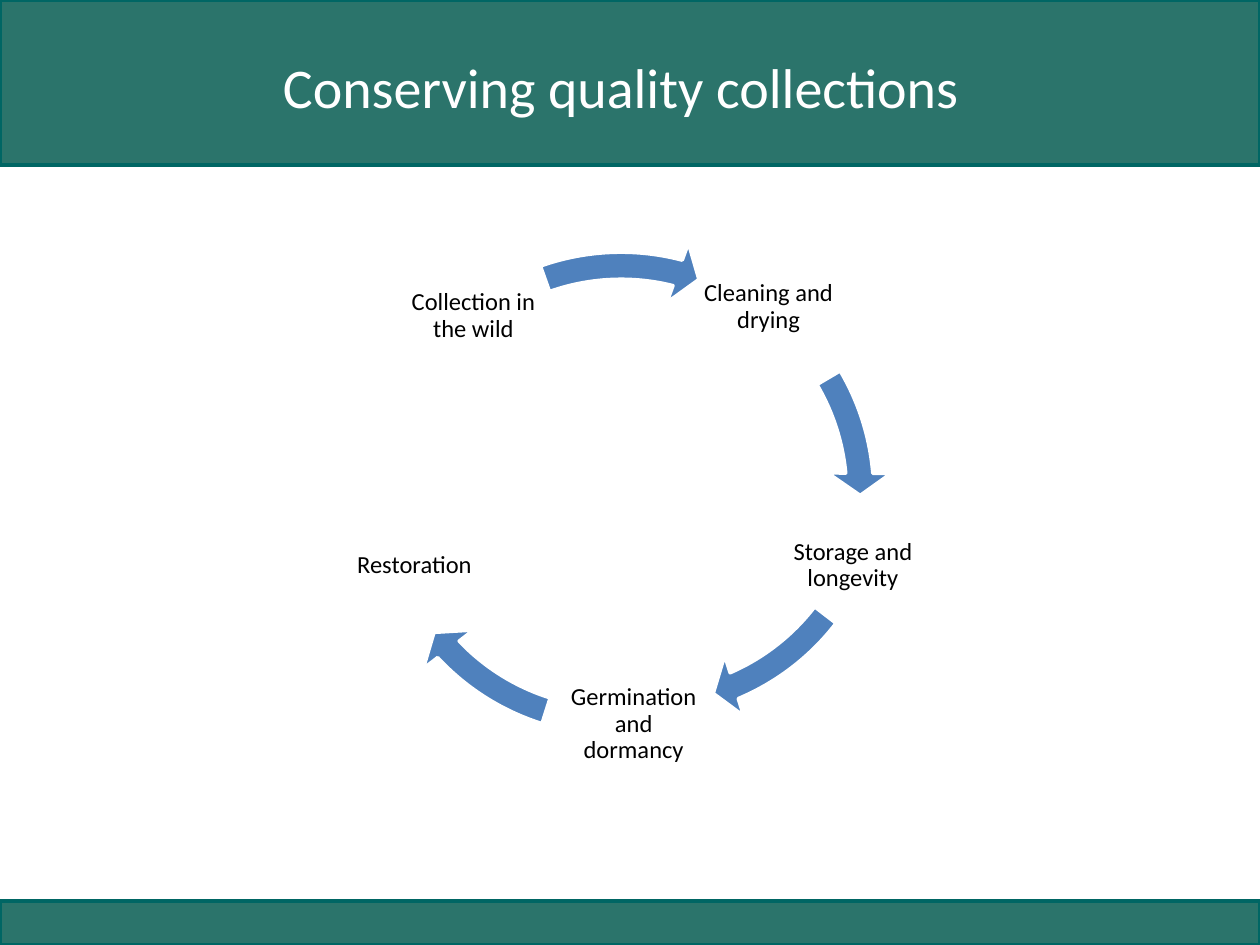
from pptx import Presentation
from pptx.dml.color import RGBColor
from pptx.enum.shapes import MSO_SHAPE as SHAPE
from pptx.enum.text import MSO_ANCHOR as ANCHOR, MSO_AUTO_SIZE as AUTO, PP_ALIGN as ALIGN
from pptx.util import Cm, Pt

GREEN = RGBColor(0x2B, 0x74, 0x6B)
DARK_GREEN = RGBColor(0x00, 0x66, 0x64)
BLUE = RGBColor(0x4F, 0x81, 0xBD)
WHITE = RGBColor(0xFF, 0xFF, 0xFF)
BLACK = RGBColor(0x00, 0x00, 0x00)

WIDTH, HEIGHT = 25.4, 19.05
LABEL_SIZE = 2.79
RING_SIZE = 10.46
THICKNESS, HEAD_ANGLE, HEAD_WIDTH = 0.052, 3.36, 0.061

STEPS = [
    ("Cleaning and drying", 14.1, 4.8),
    ("Storage and longevity", 15.8, 10.01),
    ("Germination and dormancy", 11.38, 13.21),
    ("Restoration", 6.96, 10.01),
    ("Collection in the wild", 8.15, 4.98),
]
ARROWS = [
    (7.52, 4.72, 212.928, 197.666),
    (7.77, 4.37, 40.143, 22.538),
    (7.16, 4.72, 82.102, 64.497),
    (7.29, 4.72, 170.637, 150.303),
]


def set_attrs(target, values):
    for name, value in values.items():
        setattr(target, name, value)


def add_filled(s, kind, box, fill, line):
    sp = s.shapes.add_shape(kind, *map(Cm, box))
    sp.shadow.inherit = False
    sp.fill.solid()
    sp.fill.fore_color.rgb = fill
    sp.line.color.rgb = line
    sp.line.width = Pt(2)
    return sp


def write_text(tf, text, size, color):
    set_attrs(tf, {"word_wrap": True, "auto_size": AUTO.NONE,
                   "vertical_anchor": ANCHOR.MIDDLE})
    p = tf.paragraphs[0]
    p.alignment = ALIGN.CENTER
    r = p.add_run()
    r.text = text
    set_attrs(r.font, {"name": "Calibri", "size": Pt(size)})
    r.font.color.rgb = color
    return p


def set_title(s, text):
    title = s.shapes.title
    set_attrs(title, {"left": Cm(0.94), "top": Cm(0.15),
                      "width": Cm(23.16), "height": Cm(3.18)})
    write_text(title.text_frame, text, 32, WHITE)


def add_band(s, top, height):
    band = add_filled(s, SHAPE.RECTANGLE, (0, top, WIDTH, height), GREEN, DARK_GREEN)
    s.shapes.title._element.addprevious(band._element)


def add_label(s, text, left, top):
    box = s.shapes.add_textbox(*map(Cm, (left, top, LABEL_SIZE, LABEL_SIZE)))
    tf = box.text_frame
    sides = ("left", "top", "right", "bottom")
    set_attrs(tf, {f"margin_{side}": Cm(0.05) for side in sides})
    write_text(tf, text, 14, BLACK).line_spacing = 0.9


def add_arrow(s, left, top, end, start):
    box = (left, top, RING_SIZE, RING_SIZE)
    arrow = add_filled(s, SHAPE.CIRCULAR_ARROW, box, BLUE, WHITE)
    for i, value in enumerate((THICKNESS, HEAD_ANGLE, end, start, HEAD_WIDTH)):
        arrow.adjustments[i] = value


def main():
    prs = Presentation()
    prs.slide_width, prs.slide_height = Cm(WIDTH), Cm(HEIGHT)
    s = prs.slides.add_slide(prs.slide_layouts[5])
    set_title(s, "Conserving quality collections")
    add_band(s, 18.16, 0.89)
    add_band(s, 0, 3.33)
    for arrow in ARROWS:
        add_arrow(s, *arrow)
    for step in STEPS:
        add_label(s, *step)
    prs.save("out.pptx")


if __name__ == "__main__":
    main()
